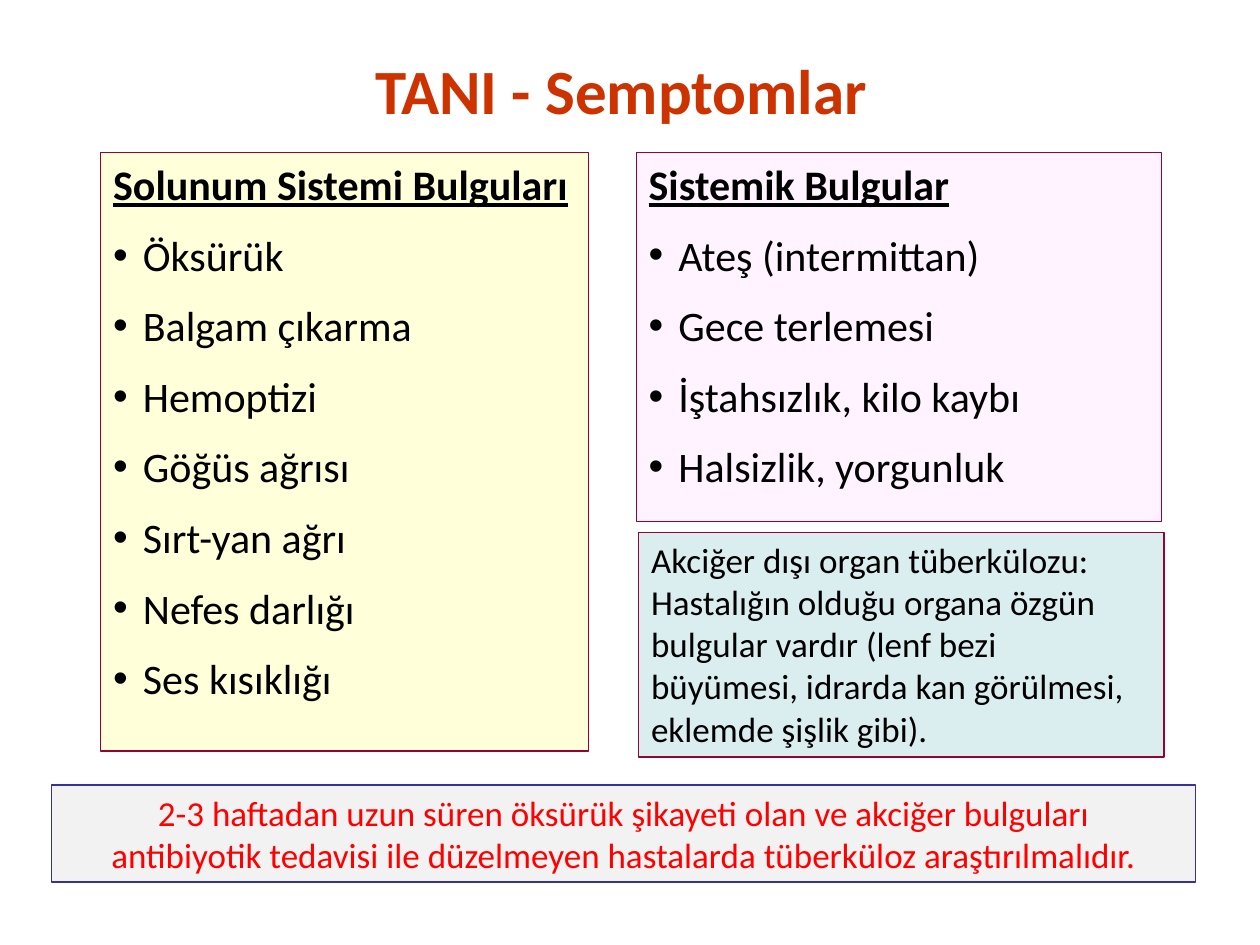
from lxml import etree
from pptx import Presentation
from pptx.dml.color import RGBColor
from pptx.enum import shapes, text
from pptx.oxml import ns
from pptx.util import Pt

LEFT, MID = text.PP_ALIGN.LEFT, text.PP_ALIGN.CENTER
HEAD = {"bold": True, "underline": True}


def color(code):
    return RGBColor.from_string(code)


class Page:
    def __init__(self, slide, font):
        self.slide = slide
        self.font = font

    def label(self, shape, lines, size, ink, align=LEFT, gap=0, **style):
        """Fill a shape with one paragraph per line and return the paragraphs."""
        frame = shape.text_frame
        frame.word_wrap = True
        frame.vertical_anchor = text.MSO_ANCHOR.TOP
        frame.text = "\n".join(lines)
        for para in frame.paragraphs:
            para.alignment = align
            para.space_before = Pt(gap)
            self.style(para, name=self.font, size=Pt(size), **style)
            para.runs[0].font.color.rgb = color(ink)
        return frame.paragraphs

    def style(self, para, **values):
        for key, value in values.items():
            setattr(para.runs[0].font, key, value)

    def title(self, spot, words):
        box = self.slide.shapes.add_textbox(*map(Pt, spot))
        self.label(box, [words], 36, "CC3300", MID, bold=True)

    def panel(self, spot, fill, edge, lines, size, ink="000000", **style):
        box = self.slide.shapes.add_shape(
            shapes.MSO_SHAPE.RECTANGLE, *map(Pt, spot))
        box.shadow.inherit = False
        box.fill.solid()
        box.fill.fore_color.rgb = color(fill)
        box.line.color.rgb = color(edge)
        box.line.width = Pt(0.75)
        return self.label(box, lines, size, ink, **style)

    def bullet(self, para):
        props = para._p.get_or_add_pPr()
        props.set("marL", str(Pt(17)))
        props.set("indent", str(-Pt(17)))
        for tag, key, value in (("a:buFont", "typeface", "Arial"),
                                ("a:buChar", "char", "•")):
            etree.SubElement(props, ns.qn(tag)).set(key, value)

    def findings(self, spot, fill, head, items):
        """Draw a panel with an underlined heading above a bullet list."""
        first, *rest = self.panel(
            spot, fill, "990033", [head, *items], 24, gap=11.5)
        self.style(first, **HEAD)
        for para in rest:
            self.bullet(para)


def main():
    deck = Presentation()
    deck.slide_width, deck.slide_height = Pt(720), Pt(540)
    page = Page(deck.slides.add_slide(deck.slide_layouts[6]), "Calibri")

    page.title((139, 26, 432, 50.4), "TANI - Semptomlar")
    page.findings((57.6, 87.2, 278.6, 342), "FFFFD9",
                  "Solunum Sistemi Bulguları",
                  ["Öksürük", "Balgam çıkarma", "Hemoptizi", "Göğüs ağrısı",
                   "Sırt-yan ağrı", "Nefes darlığı", "Ses kısıklığı"])
    page.findings((363.6, 87.2, 300.2, 211), "FFF3FF",
                  "Sistemik Bulgular",
                  ["Ateş (intermittan)", "Gece terlemesi",
                   "İştahsızlık, kilo kaybı", "Halsizlik, yorgunluk"])
    page.panel((29.5, 448.6, 653.8, 55.4), "F2F2F2", "333399",
               ["2-3 haftadan uzun süren öksürük şikayeti olan ve akciğer "
                "bulguları",
                "antibiyotik tedavisi ile düzelmeyen hastalarda tüberküloz "
                "araştırılmalıdır."], 20, "FF0000", align=MID)
    page.panel((365, 304.4, 300.2, 128.2), "DAEDEF", "990033",
               ["Akciğer dışı organ tüberkülozu: Hastalığın olduğu organa "
                "özgün bulgular vardır (lenf bezi büyümesi, idrarda kan "
                "görülmesi, eklemde şişlik gibi)."], 20)
    deck.save("out.pptx")


if __name__ == "__main__":
    main()
